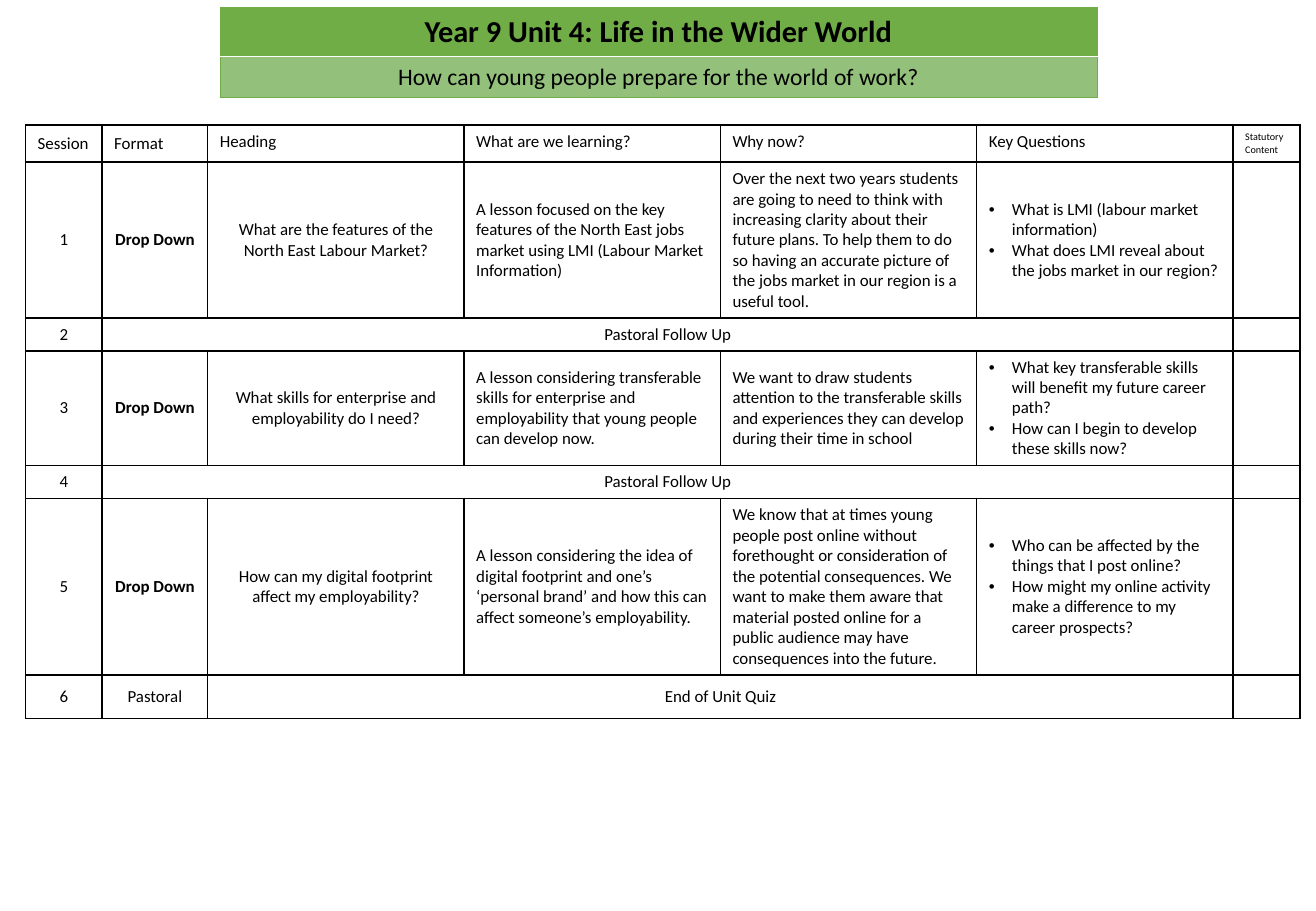
from lxml import etree
from pptx import Presentation
from pptx.dml.color import RGBColor
from pptx.enum.text import MSO_ANCHOR, PP_ALIGN
from pptx.oxml.ns import qn
from pptx.util import Inches, Pt

CENTER, LEFT = PP_ALIGN.CENTER, PP_ALIGN.LEFT
TOP, MIDDLE = MSO_ANCHOR.TOP, MSO_ANCHOR.MIDDLE

BLACK, WHITE, GREEN, PALE_GREEN = "000000", "FFFFFF", "70AD47", "93C17B"
SIDES = ("L", "R", "T", "B")
BODY = {"name": "Calibri", "size": Pt(10), "bold": False}


def rgb(value):
    return RGBColor.from_string(value)


class Deck:
    def __init__(self, width, height):
        self.prs = Presentation()
        self.prs.slide_width, self.prs.slide_height = Inches(width), Inches(height)
        self.s = self.prs.slides.add_slide(self.prs.slide_layouts[6])

    def x(self, percent):
        return round(self.prs.slide_width * percent / 100)

    def y(self, percent):
        return round(self.prs.slide_height * percent / 100)

    def table(self, left, top, widths, heights):
        frame = self.s.shapes.add_table(
            len(heights), len(widths), self.x(left), self.y(top),
            self.x(sum(widths)), self.y(sum(heights)))
        tbl = frame.table
        tbl.first_row = tbl.horz_banding = False
        for col, width in zip(tbl.columns, widths):
            col.width = self.x(width)
        for row, height in zip(tbl.rows, heights):
            row.height = self.y(height)
        return tbl

    def cell(self, cell, text, align=LEFT, anchor=MIDDLE, fill=None, borders=None, **fmt):
        cell.vertical_anchor = anchor
        if fill:
            cell.fill.solid()
            cell.fill.fore_color.rgb = rgb(fill)
        else:
            cell.fill.background()
        self.borders(cell, borders or dict.fromkeys(SIDES, (BLACK, 1)))
        lines = text if isinstance(text, list) else [text]
        tf = cell.text_frame
        for i, line in enumerate(lines):
            p = tf.add_paragraph() if i else tf.paragraphs[0]
            p.alignment = align
            if isinstance(text, list):
                self.bullet(p)
            if line:
                self.run(p, line, {**BODY, **fmt})
            else:
                etree.SubElement(p._p, qn("a:endParaRPr"), sz="1000")

    def run(self, p, text, fmt):
        r = p.add_run()
        r.text = text
        r.font.color.rgb = rgb(BLACK)
        for key, value in fmt.items():
            setattr(r.font, key, value)

    def bullet(self, p):
        pPr = p._p.get_or_add_pPr()
        pPr.set("marL", str(Inches(0.19)))
        pPr.set("indent", str(-Inches(0.19)))
        etree.SubElement(pPr, qn("a:buFont"), typeface="Arial")
        etree.SubElement(pPr, qn("a:buChar"), char="•")

    def borders(self, cell, borders):
        tcPr = cell._tc.get_or_add_tcPr()
        for i, side in enumerate(SIDES):
            color, width = borders[side]
            ln = etree.Element(qn(f"a:ln{side}"), w=str(Pt(width)))
            fill = etree.SubElement(ln, qn("a:solidFill"))
            etree.SubElement(fill, qn("a:srgbClr"), val=color)
            tcPr.insert(i, ln)


HEADERS = ["Session", "Format", "Heading", "What are we learning?", "Why now?",
           "Key Questions", "Statutory Content"]
FOLLOW_UP = ["Pastoral Follow Up", "", "", "", "", ""]
SESSIONS = [
    ["Drop Down",
     "What are the features of the North East Labour Market?",
     "A lesson focused on the key features of the North East jobs market using LMI "
     "(Labour Market Information)",
     "Over the next two years students are going to need to think with increasing "
     "clarity about their future plans. To help them to do so having an accurate "
     "picture of the jobs market in our region is a useful tool.",
     ["What is LMI (labour market information)",
      "What does LMI reveal about the jobs market in our region?"], ""],
    FOLLOW_UP,
    ["Drop Down",
     "What skills for enterprise and employability do I need?",
     "A lesson considering transferable skills for enterprise and employability that "
     "young people can develop now.",
     "We want to draw students attention to the transferable skills and experiences "
     "they can develop during their time in school",
     ["What key transferable skills will benefit my future career path?",
      "How can I begin to develop these skills now?"], ""],
    FOLLOW_UP,
    ["Drop Down",
     "How can my digital footprint affect my employability?",
     "A lesson considering the idea of digital footprint and one’s ‘personal brand’ "
     "and how this can affect someone’s employability.",
     "We know that at times young people post online without forethought or "
     "consideration of the potential consequences. We want to make them aware that "
     "material posted online for a public audience may have consequences into the future.",
     ["Who can be affected by the things that I post online?",
      "How might my online activity make a difference to my career prospects?"], ""],
    ["Pastoral", "End of Unit Quiz", "", "", "", ""],
]


def main():
    deck = Deck(10.83, 7.5)

    plan = deck.table(1.94, 13.73, [5.82, 8.03] + [19.48] * 4 + [5.08],
                      [4.07, 17.13, 3.59, 12.6, 3.59, 19.4, 4.8])
    for col, text in enumerate(HEADERS):
        deck.cell(plan.cell(0, col), text, anchor=MIDDLE if col < 2 else TOP,
                  size=Pt(6 if col == 6 else 10))
    for row, session in enumerate(SESSIONS, 1):
        for col, text in enumerate([str(row)] + session):
            deck.cell(plan.cell(row, col), text, align=CENTER if col < 3 else LEFT,
                      bold=text == "Drop Down")
    for row, col in ((2, 1), (4, 1), (6, 2)):
        plan.cell(row, col).merge(plan.cell(row, 5))

    edge, divider = (GREEN, 0.5), (WHITE, 1)
    frame = dict.fromkeys(SIDES, edge)
    banner = deck.table(16.71, 0.8, [66.67], [5.4, 4.49])
    deck.cell(banner.cell(0, 0), "Year 9 Unit 4: Life in the Wider World", CENTER, TOP,
              GREEN, {**frame, "B": divider}, size=Pt(18), bold=True)
    deck.cell(banner.cell(1, 0), "How can young people prepare for the world of work?",
              CENTER, TOP, PALE_GREEN, {**frame, "T": divider}, size=Pt(14))

    deck.prs.save("out.pptx")


if __name__ == "__main__":
    main()
